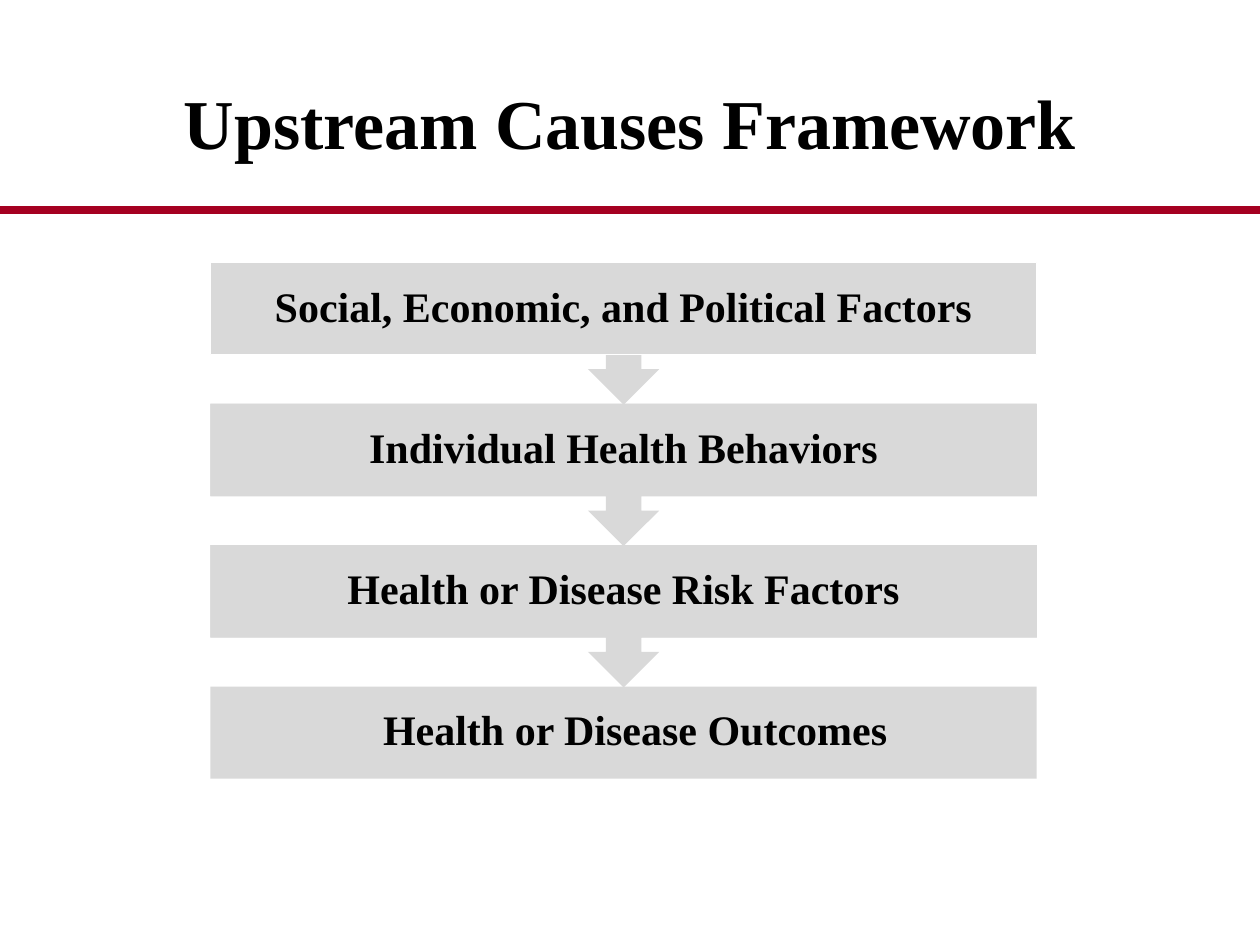
"""Build the Upstream Causes Framework slide."""
from dataclasses import dataclass
from typing import Any

from lxml import etree
from pptx import Presentation
from pptx import util as u
from pptx.dml.color import RGBColor
from pptx.enum import shapes, text
from pptx.oxml.ns import qn

COLORS = {"rule": "A50021", "box": "D9D9D9", "text": "000000", "edge": "FFFFFF"}
LEFT, TOP, WIDTH, HEIGHT = 4.24, 5.29, 16.66, 1.86
STEP, CALLOUT_HEIGHT = 2.85, 2.87
STAGES = [
    "Social, Economic, and Political Factors",
    "Individual Health Behaviors",
    "Health or Disease Risk Factors",
]
OUTCOME = "Health or Disease Outcomes"


@dataclass
class SlideBuilder:
    slide: Any
    font: str = "Times New Roman"

    def add_words(self, frame, words, size):
        frame.vertical_anchor = text.MSO_ANCHOR.MIDDLE
        paragraph = frame.paragraphs[0]
        paragraph.alignment = text.PP_ALIGN.CENTER
        run = paragraph.add_run()
        run.text = words
        run.font.name = self.font
        run.font.size = u.Pt(size)
        run.font.bold = True
        run.font.color.rgb = RGBColor.from_string(COLORS["text"])
        return paragraph

    def title(self, words, left, top, width, height):
        shape = self.slide.shapes.title
        shape.left, shape.top = u.Cm(left), u.Cm(top)
        shape.width, shape.height = u.Cm(width), u.Cm(height)
        self.add_words(shape.text_frame, words, 40)

    def rule(self, top, width):
        line = self.slide.shapes.add_connector(
            shapes.MSO_CONNECTOR.STRAIGHT, 0, u.Cm(top), u.Cm(width), u.Cm(top))
        line.line.color.rgb = RGBColor.from_string(COLORS["rule"])
        line.line.width = u.Pt(4.5)
        etree.SubElement(line._element.spPr, qn("a:effectLst"))

    def block(self, kind, top, height):
        shape = self.slide.shapes.add_shape(
            kind, u.Cm(LEFT), u.Cm(top), u.Cm(WIDTH), u.Cm(height))
        shape.shadow.inherit = False
        shape.fill.solid()
        shape.fill.fore_color.rgb = RGBColor.from_string(COLORS["box"])
        shape.line.fill.background()
        return shape

    def box(self, top):
        return self.block(shapes.MSO_SHAPE.RECTANGLE, top, HEIGHT)

    def stage(self, words, top, edged):
        callout = self.block(shapes.MSO_SHAPE.UP_ARROW_CALLOUT, top, CALLOUT_HEIGHT)
        callout.rotation = 180
        box = self.box(top)
        if edged:
            box.line.color.rgb = RGBColor.from_string(COLORS["edge"])
            box.line.width = u.Pt(0.5)
        frame = box.text_frame
        frame.margin_left = frame.margin_right = u.Cm(0.33)
        frame.margin_top = frame.margin_bottom = u.Cm(0.33)
        self.add_words(frame, words, 24).line_spacing = 0.9

    def label(self, words, left, top, width, height):
        shape = self.slide.shapes.add_textbox(
            u.Cm(left), u.Cm(top), u.Cm(width), u.Cm(height))
        frame = shape.text_frame
        frame.word_wrap = False
        frame.auto_size = text.MSO_AUTO_SIZE.SHAPE_TO_FIT_TEXT
        self.add_words(frame, words, 24).line_spacing = 0.9


def main():
    presentation = Presentation()
    presentation.slide_width, presentation.slide_height = u.Cm(25.4), u.Cm(19.05)
    builder = SlideBuilder(presentation.slides.add_slide(presentation.slide_layouts[5]))
    builder.rule(4.23, 25.4)
    builder.title("Upstream Causes Framework", 1.27, 0.85, 22.86, 3.18)
    for index, words in enumerate(STAGES):
        builder.stage(words, TOP + index * STEP, edged=index == 0)
    builder.box(TOP + len(STAGES) * STEP)
    builder.label(OUTCOME, 7.42, 14.17, 10.77, 1.17)
    presentation.save("out.pptx")


if __name__ == "__main__":
    main()
